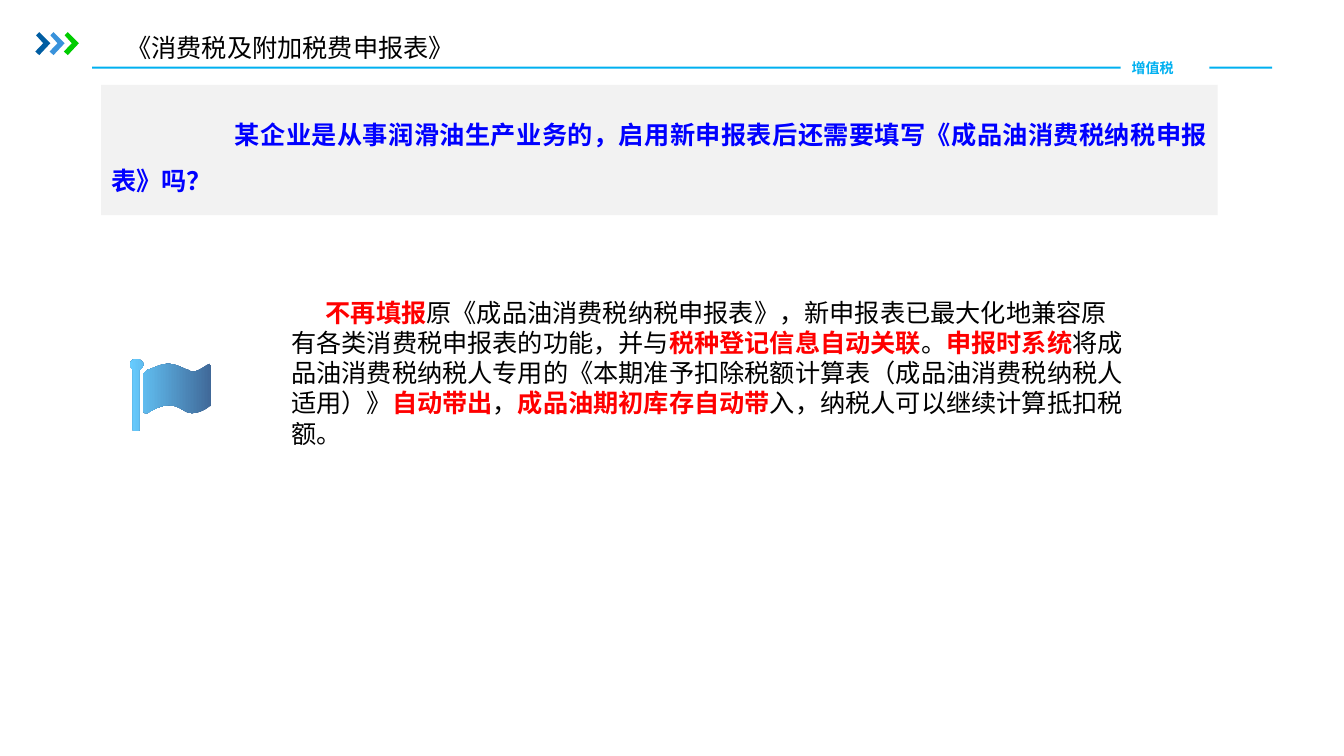
from pptx import Presentation
from pptx.dml.color import RGBColor
from pptx.enum.shapes import MSO_SHAPE
from pptx.enum.text import MSO_ANCHOR, MSO_AUTO_SIZE, PP_ALIGN
from pptx.oxml.ns import qn
from pptx.util import Cm, Pt
from lxml import etree

RECT = MSO_SHAPE.RECTANGLE
TOP, MIDDLE = MSO_ANCHOR.TOP, MSO_ANCHOR.MIDDLE
LEFT, JUSTIFY = PP_ALIGN.LEFT, PP_ALIGN.JUSTIFY
FIXED = MSO_AUTO_SIZE.NONE
HAN = "Noto Sans CJK SC"
COLORS = {
    "navy": "005DA2", "azure": "3992DB", "green": "00CC00",
    "cyan": "00B0F0", "white": "FFFFFF", "gray": "F2F2F2",
    "blue": "0000FF", "black": "000000", "red": "FF0000",
    "dusk": "406898", "sky": "66CCFF",
}
ARROW = [(0.91, 0.89), (0.99, 0.81), (1.27, 1.09),
         (0.99, 1.39), (0.89, 1.3), (1.09, 1.09)]
KNOB = [(3.35, 9.32), (3.33, 9.3), (3.28, 9.24), (3.28, 9.17),
        (3.28, 9.12), (3.35, 9.04), (3.45, 9.04),
        (3.51, 9.04), (3.61, 9.12), (3.61, 9.17),
        (3.61, 9.24), (3.58, 9.3), (3.51, 9.32)]
FOOT = [(3.51, 10.84), (3.48, 10.87), (3.4, 10.87), (3.35, 10.84)]
HEM = [(5.33, 10.19), (5.33, 10.21), (5.33, 10.24), (5.28, 10.24),
       (5.16, 10.34), (4.98, 10.41), (4.83, 10.41),
       (4.65, 10.41), (4.52, 10.21), (4.27, 10.21),
       (4.06, 10.21), (3.89, 10.31), (3.71, 10.41),
       (3.71, 10.41), (3.66, 10.41), (3.66, 10.41),
       (3.63, 10.41), (3.61, 10.36), (3.61, 10.34)]
CREST = [(3.61, 9.45), (3.61, 9.42), (3.61, 9.4), (3.63, 9.4),
         (3.66, 9.37), (3.71, 9.32), (3.73, 9.32),
         (3.89, 9.27), (4.04, 9.17), (4.24, 9.17),
         (4.42, 9.17), (4.55, 9.25), (4.72, 9.32),
         (4.78, 9.32), (4.8, 9.37), (4.83, 9.37),
         (5.03, 9.37), (5.21, 9.17), (5.28, 9.17),
         (5.31, 9.17), (5.33, 9.25), (5.33, 9.27)]
ANSWER = [
    ("不再填报", True),
    ("原《成品油消费税纳税申报表》，新申报表已最大化地兼容原有各类消费税申报表的功能，并与", False),
    ("税种登记信息自动关联", True),
    ("。", False),
    ("申报时系统", True),
    ("将成品油消费税纳税人专用的《本期准予扣除税额计算表（成品油消费税纳税人适用）》", False),
    ("自动带出", True),
    ("，", False),
    ("成品油期初库存自动带", True),
    ("入，纳税人可以继续计算抵扣税额。", False),
]


def tint(name):
    """Return a named colour."""
    return RGBColor.from_string(COLORS[name])


def place(shape, left, top, width, height):
    """Set a shape's box in centimetres."""
    shape.left, shape.top = Cm(left), Cm(top)
    shape.width, shape.height = Cm(width), Cm(height)


def paint(shape, color):
    """Give a shape a plain fill with no line or shadow."""
    shape.shadow.inherit = False
    shape.line.fill.background()
    shape.fill.solid()
    shape.fill.fore_color.rgb = tint(color)


def block(slide, box, color):
    """Add a filled rectangle."""
    shape = slide.shapes.add_shape(RECT, *map(Cm, box))
    paint(shape, color)
    return shape


def write(shape, runs, size, font, anchor=TOP, align=LEFT, indent=0):
    """Write one paragraph from (text, colour, bold) runs."""
    frame = shape.text_frame
    frame.auto_size = FIXED
    frame.word_wrap = True
    frame.vertical_anchor = anchor
    para = frame.paragraphs[0]
    para.alignment = align
    if indent:
        para._p.get_or_add_pPr().set("indent", str(Cm(indent)))
    for text, color, bold in runs:
        run = para.add_run()
        run.text = text
        run.font.size = Pt(size)
        run.font.bold = bold
        run.font.color.rgb = tint(color)
        run.font.name = font
        asian = etree.SubElement(run.font._element, qn("a:ea"))
        asian.set("typeface", HAN)
    return para


def curve(knots, steps=8):
    """Turn a chain of cubic curves into points."""
    points = [knots[0]]
    for i in range(0, len(knots) - 1, 3):
        for j in range(1, steps + 1):
            t = j / steps
            u = 1 - t
            mix = (u ** 3, 3 * u * u * t, 3 * u * t * t, t ** 3)
            points.append(tuple(sum(m * k[axis] for m, k in zip(mix, knots[i:i + 4]))
                                for axis in (0, 1)))
    return points


def outline(slide, loops, color):
    """Add a freeform of closed loops given in centimetres."""
    loops = [[(x * 1000, y * 1000) for x, y in loop] for loop in loops]
    pen = slide.shapes.build_freeform(*loops[0][0], scale=Cm(1) / 1000)
    pen.add_line_segments(loops[0][1:], close=True)
    for loop in loops[1:]:
        pen.move_to(*loop[0])
        pen.add_line_segments(loop[1:], close=True)
    shape = pen.convert_to_shape()
    paint(shape, color)
    return shape


def flag(slide):
    """Add the flag with its gradient."""
    pole = curve(KNOB) + curve(FOOT)
    cloth = curve(HEM) + curve(CREST)
    shape = outline(slide, [pole, cloth], "sky")
    shape.fill.gradient()
    shape.fill.gradient_angle = 180
    for stop, color in zip(shape.fill.gradient_stops, ("dusk", "sky")):
        stop.color.rgb = tint(color)


def main():
    """Build and save the slide."""
    deck = Presentation()
    deck.slide_width, deck.slide_height = Cm(33.87), Cm(19.05)
    slide = deck.slides.add_slide(deck.slide_layouts[5])

    for i, color in enumerate(("navy", "azure", "green")):
        outline(slide, [[(x + i * 0.36, y) for x, y in ARROW]], color)

    block(slide, (2.32, 1.68, 29.74, 0.05), "cyan")
    label = block(slide, (28.24, 1.35, 2.24, 0.71), "white")
    write(label, [("增值税", "cyan", True)], 10, HAN)
    label.text_frame.margin_left = label.text_frame.margin_right = Cm(0.28)
    label.text_frame.margin_top = label.text_frame.margin_bottom = Cm(0.15)

    panel = block(slide, (2.55, 2.14, 28.14, 3.28), "gray")
    ask = "某企业是从事润滑油生产业务的，启用新申报表后还需要填写《成品油消费税纳税申报表》吗？"
    para = write(panel, [(ask, "blue", True)], 18, HAN, MIDDLE, JUSTIFY, 3.12)
    para.line_spacing = 1.5

    flag(slide)

    title = slide.shapes.title
    place(title, 2.93, 0.69, 10, 1.02)
    write(title, [("《消费税及附加税费申报表》", "black", False)], 18, "Arial")

    reply = slide.shapes.add_textbox(Cm(7.09), Cm(7.36), Cm(21.54), Cm(4.09))
    runs = [(text, "red" if key else "black", key) for text, key in ANSWER]
    write(reply, runs, 18, "Arial", indent=0.87)

    deck.save("out.pptx")


if __name__ == "__main__":
    main()
